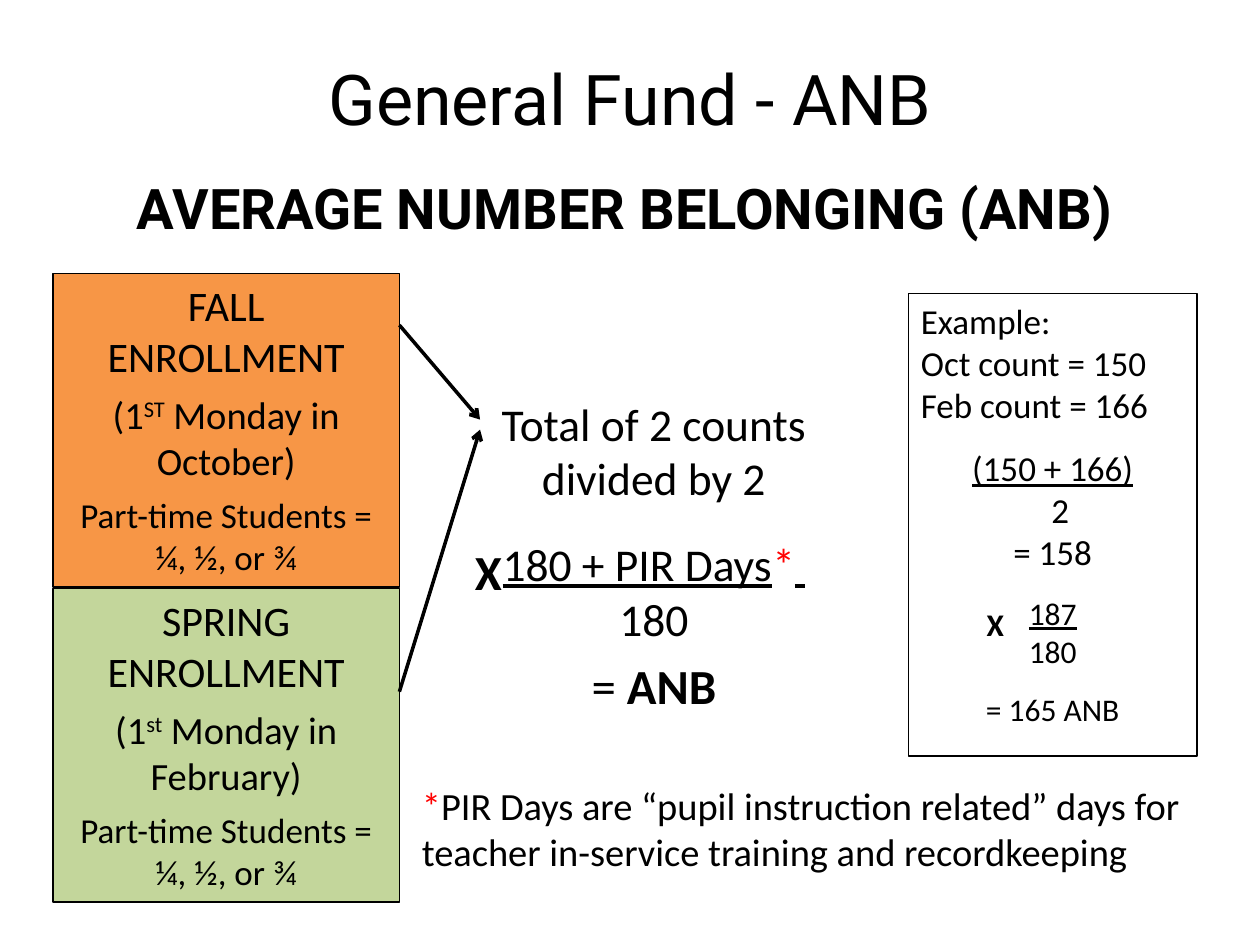
"""Build the General Fund ANB slide."""
from pptx import Presentation as Deck
from pptx.dml.color import RGBColor as Rgb
from pptx.enum.shapes import MSO_CONNECTOR as Link, MSO_SHAPE as Kind
from pptx.enum.text import MSO_ANCHOR as Anchor, MSO_AUTO_SIZE as Auto, PP_ALIGN as Align
from pptx.oxml import parse_xml
from pptx.oxml.ns import nsdecls, qn
from pptx.util import Inches, Pt

THEME = {
    "ink": "000000", "red": "FF0000", "fall": "F79646", "spring": "C3D69B",
    "head": "Roboto", "body": "Calibri",
    "title": 40, "sub": 32, "big": 28, "sum": 26, "term": 24, "note": 22, "text": 20, "small": 18,
}

TITLE = "General Fund - ANB"
SUB = "AVERAGE NUMBER BELONGING (ANB)"
TERMS = [
    ("FALL", "ST", "October", "fall"),
    ("SPRING", "st", "February", "spring"),
]
STAR = ("*", {"color": "red"})
LINE = {"under": True}
SUM = [
    (["Total of 2 counts"], {}),
    (["divided by 2"], {"after": 18}),
    ([" ", ("180 + PIR Days", LINE), STAR, (" ", LINE), " "], {}),
    (["180"], {"after": 6}),
    (["= ", ("ANB", {"bold": True})], {"size": "big"}),
]
NOTE = [([STAR, "PIR Days are “pupil instruction related” days for teacher "
         "in-service training and recordkeeping"], {"align": Align.LEFT})]
LEFT = {"align": Align.LEFT}
CASE = [
    (["Example:"], LEFT),
    (["Oct count = 150"], LEFT),
    (["Feb count = 166"], {**LEFT, "after": 12}),
    ([("(150 + 166)", LINE)], {}),
    (["2"], {"indent": 0.12}),
    (["= 158"], {"after": 12}),
    ([("187", LINE)], {"size": "small"}),
    (["180"], {"size": "small", "after": 12}),
    (["= 165 ANB"], {"size": "small"}),
]
TIMES = [([("X", {"bold": True})], {})]

EDGE, TOP, WIDE, HIGH, STEP = 0.42, 2.17, 2.75, 2.49, 2.5
JOIN = EDGE + WIDE
TIP = 3.81
ARROWS = [(2.58, 3.33), (5.49, 3.41)]


def paint(name):
    return Rgb.from_string(THEME[name])


def style(run, size="text", font="body", color="ink", bold=False, under=False, raised=False):
    face = run.font
    face.name, face.size, face.bold = THEME[font], Pt(THEME[size]), bold
    face.color.rgb = paint(color)
    if under:
        face.underline = True
    if raised:
        run._r.get_or_add_rPr().set("baseline", "30000")


def write(frame, text, align=Align.CENTER, after=0, **base):
    for i, (runs, form) in enumerate(text):
        para = frame.paragraphs[0] if i == 0 else frame.add_paragraph()
        form = {"align": align, "after": after, **base, **form}
        para.alignment = form.pop("align")
        para.space_after = Pt(form.pop("after"))
        indent = form.pop("indent", 0)
        if indent:
            para._p.get_or_add_pPr().set("marL", str(Inches(indent)))
        for part in runs:
            words, extra = (part, {}) if isinstance(part, str) else part
            run = para.add_run()
            run.text = words
            style(run, **{**form, **extra})


def place(slide, spot, text, fill=None, edge=0, **form):
    area = [Inches(n) for n in spot]
    if edge:
        shape = slide.shapes.add_shape(Kind.RECTANGLE, *area)
        shape.shadow.inherit = False
        shape.line.color.rgb = paint("ink")
        shape.line.width = Pt(edge)
        if fill:
            shape.fill.solid()
            shape.fill.fore_color.rgb = paint(fill)
        else:
            shape.fill.background()
    else:
        shape = slide.shapes.add_textbox(*area)
    frame = shape.text_frame
    frame.word_wrap = True
    frame.auto_size = Auto.SHAPE_TO_FIT_TEXT
    frame.vertical_anchor = Anchor.TOP
    write(frame, text, **form)


def arrow(slide, start, end):
    link = slide.shapes.add_connector(Link.STRAIGHT, *[Inches(n) for n in start + end])
    link.line.color.rgb = paint("ink")
    link.line.width = Pt(2)
    props = link._element.spPr
    props.find(qn("a:ln")).append(parse_xml(f'<a:tailEnd {nsdecls("a")} type="arrow"/>'))
    props.append(parse_xml(f'<a:effectLst {nsdecls("a")}/>'))


def main():
    deck = Deck()
    deck.slide_width, deck.slide_height = Inches(10), Inches(7.5)
    slide = deck.slides.add_slide(deck.slide_layouts[5])

    title = slide.shapes.title
    title.left, title.top, title.width, title.height = [Inches(n) for n in (0.5, 0.3, 9, 0.95)]
    title.text_frame.vertical_anchor = Anchor.MIDDLE
    write(title.text_frame, [([TITLE], {})], size="title", font="head")

    for i, (term, order, month, fill) in enumerate(TERMS):
        text = [
            ([f"{term} ENROLLMENT"], {"size": "term"}),
            (["(1", (order, {"raised": True}), f" Monday in {month})"], {"size": "note"}),
            (["Part-time Students = ¼, ½, or ¾"], {}),
        ]
        place(slide, (EDGE, TOP + i * STEP, WIDE, HIGH), text, fill=fill, edge=1, after=6)

    place(slide, (JOIN, 3.09, 4.04, 2.91), SUM, size="sum")
    place(slide, (3.25, 6.16, 6.25, 0.84), NOTE, size="note")
    place(slide, (EDGE, 1.33, 9.08, 0.64), [([SUB], {})], size="sub", font="head", bold=True)
    place(slide, (3.67, 4.25, 0.33, 0.57), TIMES, size="big")
    for start, end in ARROWS:
        arrow(slide, (JOIN, start), (TIP, end))
    place(slide, (7.21, 2.33, 2.29, 3.67), CASE, edge=0.75)
    place(slide, (7.71, 4.75, 0.38, 0.4), TIMES, size="small")

    deck.save("out.pptx")


if __name__ == "__main__":
    main()
